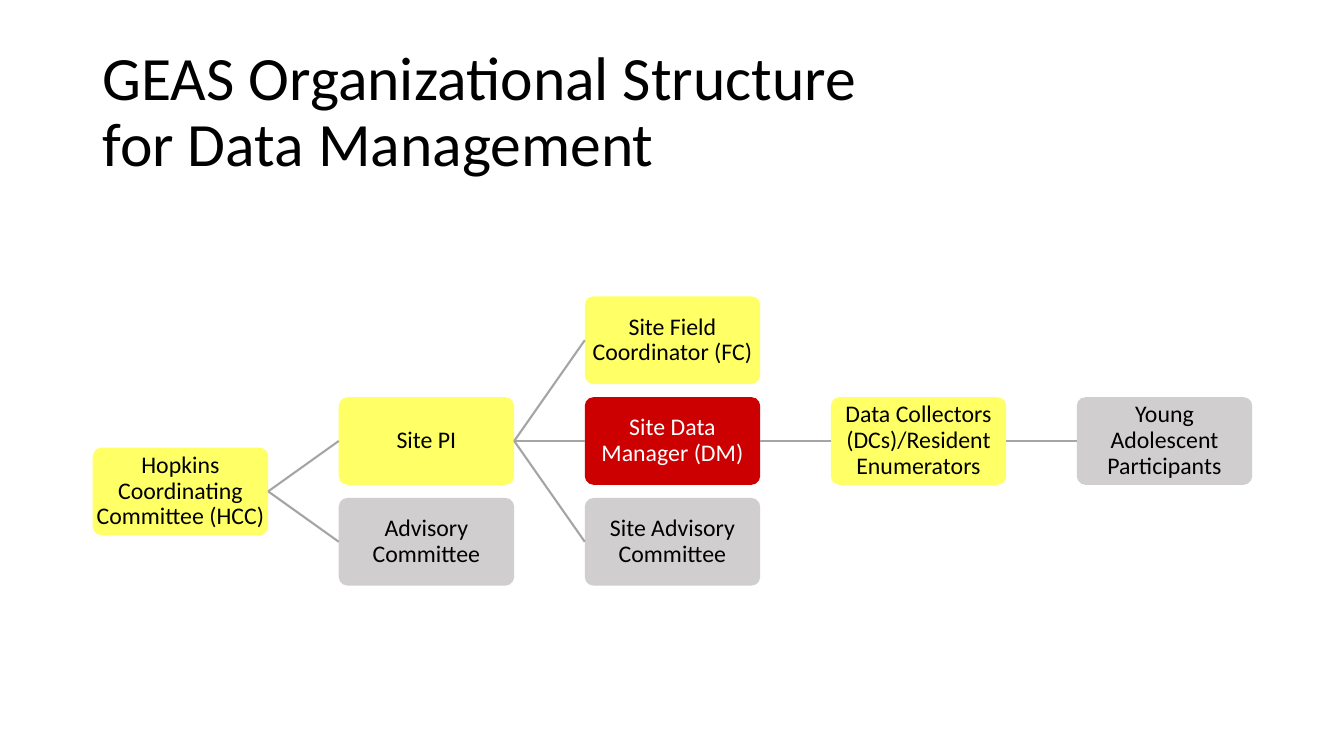
from dataclasses import dataclass

from lxml.etree import SubElement
from pptx import Presentation
from pptx.dml.color import RGBColor
from pptx.enum.shapes import MSO_CONNECTOR, MSO_SHAPE
from pptx.enum.text import MSO_ANCHOR, PP_ALIGN
from pptx.oxml.ns import qn
from pptx.util import Inches, Pt

TITLE_LINES = ["GEAS Organizational Structure", "for Data Management"]

# key: (label, role, column, row, parent key)
UNITS = {
    "hcc": ("Hopkins Coordinating Committee (HCC)", "lead", 0, 1.5, None),
    "pi": ("Site PI", "lead", 1, 1, "hcc"),
    "advisory": ("Advisory Committee", "support", 1, 2, "hcc"),
    "fc": ("Site Field Coordinator (FC)", "lead", 2, 0, "pi"),
    "dm": ("Site Data Manager (DM)", "focus", 2, 1, "pi"),
    "site_advisory": ("Site Advisory Committee", "support", 2, 2, "pi"),
    "dc": ("Data Collectors (DCs)/Resident Enumerators", "lead", 3, 1, "dm"),
    "young": ("Young Adolescent Participants", "support", 4, 1, "dc"),
}


@dataclass(frozen=True)
class Theme:
    font: str = "Calibri"
    title_size: int = 44
    unit_size: int = 17
    title_color: str = "000000"
    line_color: str = "A5A5A5"
    line_width: float = 1.5
    line_spacing: float = 0.9


THEME = Theme()
ROLE_COLORS = {  # role: (fill, text)
    "lead": ("FFFF66", "000000"),
    "support": ("D0CECE", "000000"),
    "focus": ("CC0000", "FFFFFF"),
}

CHART_LEFT, CHART_TOP = 0.92, 2.94
UNIT_WIDTH, UNIT_HEIGHT = 1.74, 0.87
COLUMN_STEP, ROW_STEP = 2.44, 1.0
LEFT_SITE, RIGHT_SITE = 1, 3


def add_span(para, text, size, color):
    span = para.add_run()
    span.text = text
    span.font.name = THEME.font
    span.font.size = Pt(size)
    span.font.color.rgb = RGBColor.from_string(color)


def prepare_frame(frame):
    """Wrap and centre vertically; return the first paragraph."""
    frame.word_wrap = True
    frame.vertical_anchor = MSO_ANCHOR.MIDDLE
    para = frame.paragraphs[0]
    para.line_spacing = THEME.line_spacing
    return para


def add_title(page):
    box = page.shapes.add_textbox(Inches(0.92), Inches(0.4), Inches(11.5), Inches(1.45))
    para = prepare_frame(box.text_frame)
    for index, line in enumerate(TITLE_LINES):
        if index:
            para.add_line_break()
        add_span(para, line, THEME.title_size, THEME.title_color)


def add_unit(page, label, role, column, row):
    fill, text_color = ROLE_COLORS[role]
    unit = page.shapes.add_shape(
        MSO_SHAPE.ROUNDED_RECTANGLE,
        Inches(CHART_LEFT + column * COLUMN_STEP),
        Inches(CHART_TOP + row * ROW_STEP),
        Inches(UNIT_WIDTH),
        Inches(UNIT_HEIGHT),
    )
    unit.adjustments[0] = 0.1
    unit.shadow.inherit = False
    unit.fill.solid()
    unit.fill.fore_color.rgb = RGBColor.from_string(fill)
    unit.line.fill.background()
    frame = unit.text_frame
    frame.margin_left = frame.margin_right = Inches(0.01)
    frame.margin_top = frame.margin_bottom = Inches(0.01)
    para = prepare_frame(frame)
    para.alignment = PP_ALIGN.CENTER
    add_span(para, label, THEME.unit_size, text_color)
    return unit


def link(page, parent, child):
    connector = page.shapes.add_connector(MSO_CONNECTOR.STRAIGHT, 0, 0, 0, 0)
    connector.begin_connect(parent, RIGHT_SITE)
    connector.end_connect(child, LEFT_SITE)
    connector.line.color.rgb = RGBColor.from_string(THEME.line_color)
    connector.line.width = Pt(THEME.line_width)
    SubElement(connector._element.spPr, qn("a:effectLst"))


def main():
    deck = Presentation()
    deck.slide_width, deck.slide_height = Inches(13.33), Inches(7.5)
    page = deck.slides.add_slide(deck.slide_layouts[6])
    add_title(page)
    units = {}
    for key, (label, role, column, row, parent) in UNITS.items():
        units[key] = add_unit(page, label, role, column, row)
        if parent:
            link(page, units[parent], units[key])
    deck.save("out.pptx")


if __name__ == "__main__":
    main()
